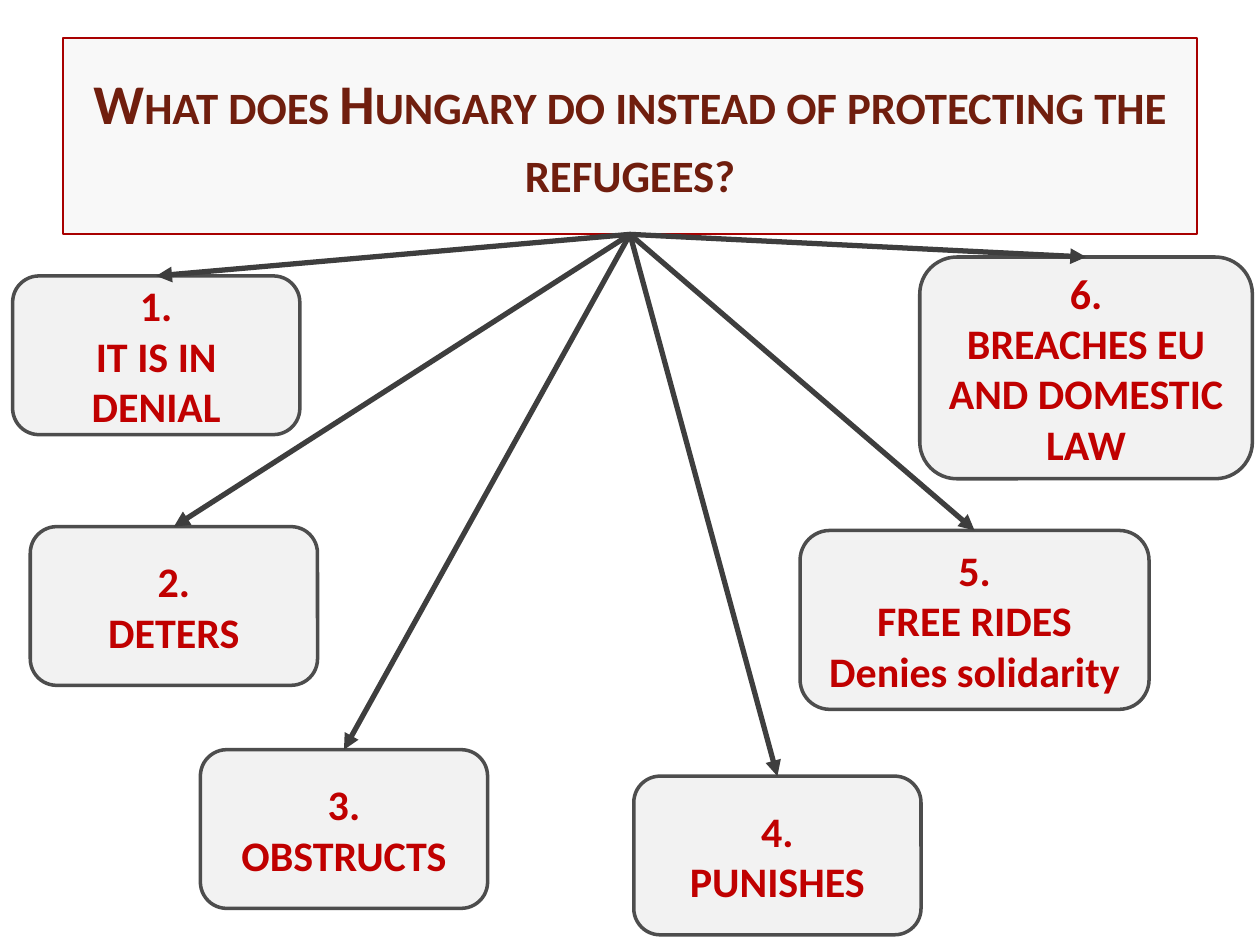
from lxml import etree
from pptx import Presentation
from pptx.dml.color import RGBColor
from pptx.enum.shapes import MSO_CONNECTOR, MSO_SHAPE
from pptx.enum.text import MSO_ANCHOR, MSO_AUTO_SIZE, PP_ALIGN
from pptx.oxml.ns import qn
from pptx.util import Inches, Pt

COLORS = {"panel": "F2F2F2", "title_line": "A80000", "title": "701E0E",
          "box_line": "4D4D4D", "text": "C00000", "arrow": "3E3E3E"}
BOTTOM_SITE, TOP_SITE = 2, 0


def color(name):
    return RGBColor.from_string(COLORS[name])


def style_box(shape, line_name, line_width, lines, size, text_name):
    """Fill and outline a shape and write one centred bold paragraph per line."""
    shape.fill.solid()
    shape.fill.fore_color.rgb = color("panel")
    shape.line.color.rgb = color(line_name)
    shape.line.width = Pt(line_width)
    frame = shape.text_frame
    frame.word_wrap = True
    frame.auto_size = MSO_AUTO_SIZE.NONE
    frame.vertical_anchor = MSO_ANCHOR.MIDDLE
    for index, line in enumerate(lines):
        para = frame.add_paragraph() if index else frame.paragraphs[0]
        para.alignment = PP_ALIGN.CENTER
        span = para.add_run()
        span.text = line
        span.font.name = "Calibri"
        span.font.size = Pt(size)
        span.font.bold = True
        span.font.color.rgb = color(text_name)


deck = Presentation()
deck.slide_width, deck.slide_height = Inches(10), Inches(7.5)
page = deck.slides.add_slide(deck.slide_layouts[5])

title = page.shapes.title
title.left, title.top = Inches(0.5), Inches(0.3)
title.width, title.height = Inches(9), Inches(1.56)
style_box(title, "title_line", 1.25,
          ["What does Hungary do instead of protecting the refugees?"], 32, "title")
title_span = title.text_frame.paragraphs[0].runs[0]
title_span.font._element.set("cap", "small")
panel_color = title.fill._xPr.find(qn("a:solidFill"))[0]
etree.SubElement(panel_color, qn("a:alpha")).set("val", "50000")

# Left, top, width, height, wording; numbered in reading order
answers = [
    (0.1, 2.19, 2.28, 1.26, "IT IS IN DENIAL"),
    (0.24, 4.18, 2.28, 1.26, "DETERS"),
    (1.59, 5.95, 2.28, 1.26, "OBSTRUCTS"),
    (5.03, 6.16, 2.28, 1.26, "PUNISHES"),
    (6.35, 4.21, 2.77, 1.42, "FREE RIDES Denies solidarity"),
    (7.3, 2.04, 2.64, 1.76, "BREACHES EU AND DOMESTIC LAW"),
]
for number, (*place, wording) in enumerate(answers, start=1):
    box = page.shapes.add_shape(MSO_SHAPE.ROUNDED_RECTANGLE, *map(Inches, place))
    box.shadow.inherit = False
    style_box(box, "box_line", 2, [f"{number}.", wording], 24, "text")

    arrow = page.shapes.add_connector(MSO_CONNECTOR.STRAIGHT, 0, 0, 0, 0)
    arrow.begin_connect(title, BOTTOM_SITE)
    arrow.end_connect(box, TOP_SITE)
    arrow.line.color.rgb = color("arrow")
    arrow.line.width = Pt(3)
    etree.SubElement(arrow.line._get_or_add_ln(), qn("a:tailEnd")).set("type", "triangle")
    etree.SubElement(arrow._element.spPr, qn("a:effectLst"))

deck.save("out.pptx")
